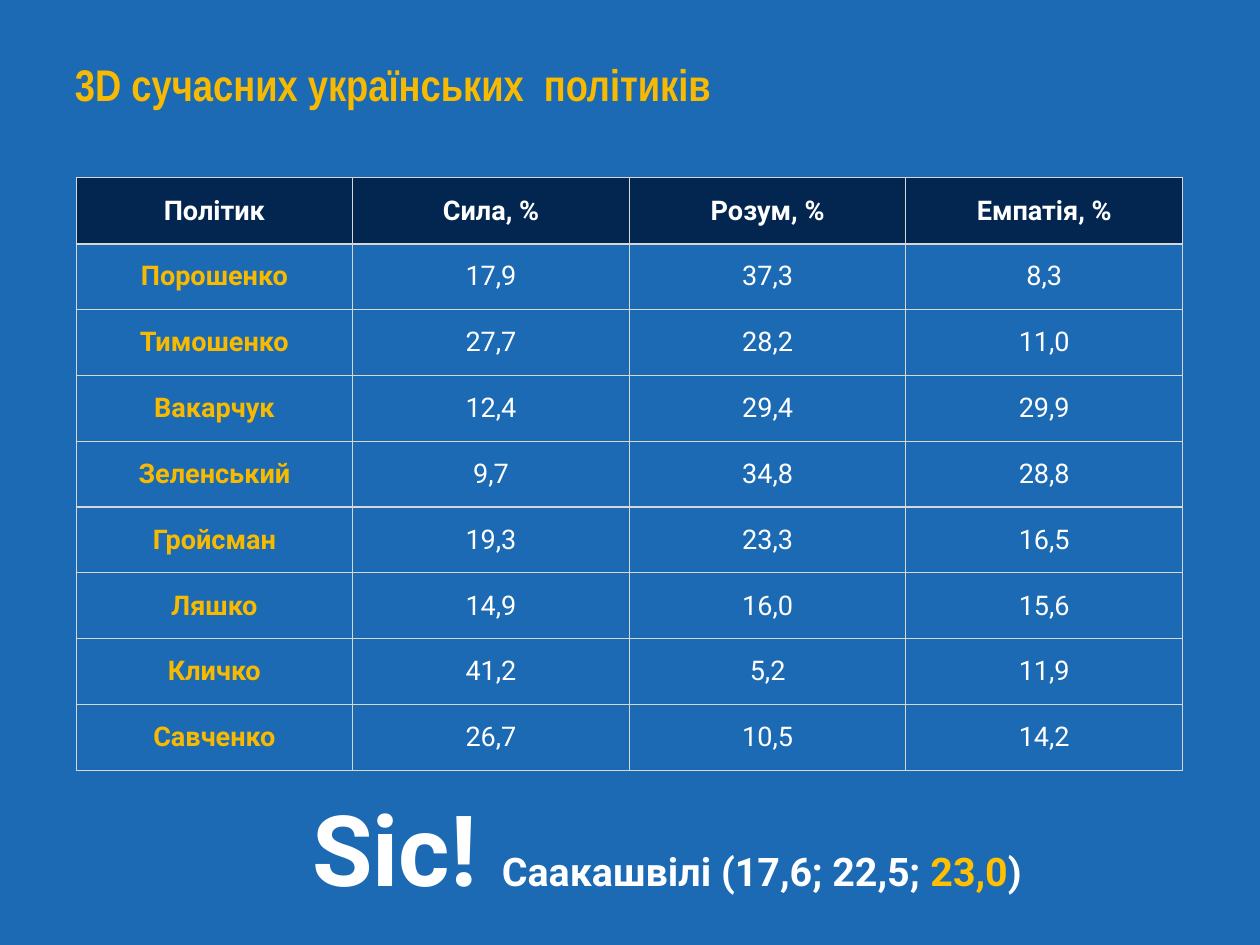
from dataclasses import dataclass

from lxml.etree import SubElement
from pptx import Presentation
from pptx.dml.color import RGBColor
from pptx.enum.text import MSO_ANCHOR as Anchor, MSO_AUTO_SIZE as AutoSize, PP_ALIGN as Align
from pptx.oxml.ns import qn
from pptx.util import Cm, Pt

BLUE, NAVY, WHITE = "1B6AB3", "032650", "FFFFFF"
YELLOW, AMBER, GREY = "F8BA00", "FFC000", "D6D7D6"
MARGIN = Cm(0.15)
HEADINGS = ("Політик", "Сила, %", "Розум, %", "Емпатія, %")


@dataclass(frozen=True)
class Politician:
    name: str
    strength: str
    mind: str
    empathy: str


POLITICIANS = (
    Politician("Порошенко", "17,9", "37,3", "8,3"),
    Politician("Тимошенко", "27,7", "28,2", "11,0"),
    Politician("Вакарчук", "12,4", "29,4", "29,9"),
    Politician("Зеленський", "9,7", "34,8", "28,8"),
    Politician("Гройсман", "19,3", "23,3", "16,5"),
    Politician("Ляшко", "14,9", "16,0", "15,6"),
    Politician("Кличко", "41,2", "5,2", "11,9"),
    Politician("Савченко", "26,7", "10,5", "14,2"),
)


def color(value: str) -> RGBColor:
    return RGBColor.from_string(value)


def add_text(paragraph, text: str, *, size: float = 22, font: str = "Roboto",
             fill: str = WHITE, bold: bool = True) -> None:
    run = paragraph.add_run()
    run.text = text
    run.font.size = Pt(size)
    run.font.name = font
    run.font.bold = bold
    run.font.color.rgb = color(fill)


def set_margins(target) -> None:
    target.margin_left = target.margin_right = MARGIN
    target.margin_top = target.margin_bottom = MARGIN


def add_box(slide, left: float, top: float, width: float, height: float,
            anchor: Anchor, align: Align):
    shape = slide.shapes.add_textbox(Cm(left), Cm(top), Cm(width), Cm(height))
    frame = shape.text_frame
    frame.word_wrap = True
    frame.auto_size = AutoSize.SHAPE_TO_FIT_TEXT
    frame.vertical_anchor = anchor
    set_margins(frame)
    paragraph = frame.paragraphs[0]
    paragraph.alignment = align
    return paragraph


def add_borders(cell, top: float, bottom: float) -> None:
    properties = cell._tc.get_or_add_tcPr()
    for side, width in (("L", 1), ("R", 1), ("T", top), ("B", bottom)):
        line = SubElement(properties, qn(f"a:ln{side}"), w=str(Pt(width)))
        SubElement(SubElement(line, qn("a:solidFill")), qn("a:srgbClr"), val=GREY)


def fill_cell(cell, text: str, row: int, column: int) -> None:
    is_header = row == 0
    is_name = column == 0
    cell.vertical_anchor = Anchor.MIDDLE
    set_margins(cell)
    add_borders(cell, top=2 if row == 1 else 1, bottom=2 if is_header else 1)
    if is_header:
        cell.fill.solid()
        cell.fill.fore_color.rgb = color(NAVY)
    else:
        cell.fill.background()
    paragraph = cell.text_frame.paragraphs[0]
    paragraph.alignment = Align.CENTER
    add_text(paragraph, text, bold=is_header or is_name,
             fill=YELLOW if is_name and not is_header else WHITE)


def add_ratings(slide) -> None:
    rows = [HEADINGS] + [(p.name, p.strength, p.mind, p.empathy) for p in POLITICIANS]
    table = slide.shapes.add_table(len(rows), len(HEADINGS), Cm(2.18), Cm(5.1),
                                   Cm(31.72), Cm(17)).table
    table.first_row = False
    table.horz_banding = False
    for row, values in enumerate(rows):
        for column, value in enumerate(values):
            fill_cell(table.cell(row, column), value, row, column)


def main() -> None:
    presentation = Presentation()
    presentation.slide_width = Cm(36.12)
    presentation.slide_height = Cm(27.1)
    slide = presentation.slides.add_slide(presentation.slide_layouts[6])
    slide.background.fill.solid()
    slide.background.fill.fore_color.rgb = color(BLUE)

    title = add_box(slide, 2, 1.5, 28.85, 1.83, Anchor.TOP, Align.LEFT)
    add_text(title, "3D сучасних українських  політиків", size=36,
             font="Arial Narrow", fill=YELLOW)

    add_ratings(slide)

    remark = add_box(slide, 4.24, 22.45, 29.77, 3.71, Anchor.MIDDLE, Align.CENTER)
    add_text(remark, "Sic! ", size=80)
    add_text(remark, "Саакашвілі (17,6; 22,5; ", size=32)
    add_text(remark, "23,0", size=32, fill=AMBER)
    add_text(remark, ")", size=32)

    presentation.save("out.pptx")


if __name__ == "__main__":
    main()
